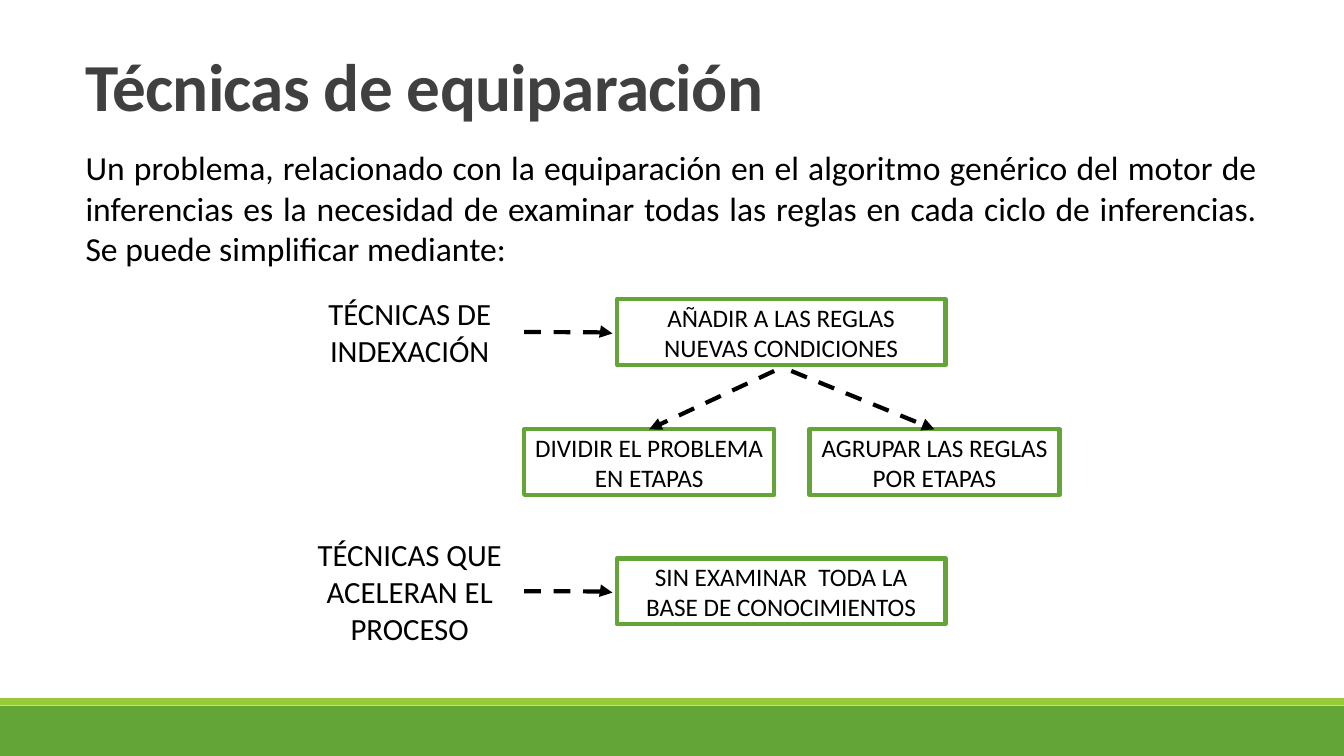
from dataclasses import dataclass

from lxml.etree import SubElement
from pptx import Presentation
from pptx.dml.color import RGBColor
from pptx.enum.dml import MSO_LINE
from pptx.enum.shapes import MSO_CONNECTOR as CONN, MSO_SHAPE
from pptx.enum.text import MSO_ANCHOR as ANCHOR, PP_ALIGN as ALIGN
from pptx.oxml.ns import qn
from pptx.shapes.autoshape import Shape
from pptx.shapes.connector import Connector
from pptx.slide import Slide
from pptx.util import Pt


@dataclass(frozen=True)
class Theme:
    font: str = "Calibri"
    title_color: str = "404040"
    ink: str = "000000"
    paper: str = "FFFFFF"
    green: str = "63A537"
    lime: str = "99CB38"
    title: int = 48
    body: int = 24
    label: int = 22
    box: int = 18
    stroke: int = 3


@dataclass(frozen=True)
class Box:
    text: str
    left: float
    top: float
    width: float
    height: float


@dataclass(frozen=True)
class Technique:
    label: str
    method: str
    top: float


THEME = Theme()
SLIDE_W, SLIDE_H = 960, 540
MARGIN, TEXT_W = 54, 851
BOX_H = 46.8
LABEL_X, LABEL_W, LABEL_H = 203, 174.3, 34.6
METHOD_X, METHOD_W = 440.6, 234.8
STEP_X, STEP_TOP, STEP_W, STEP_PITCH = 374.4, 306.7, 178.6, 203.8
ARROW_W, ARROW_DROP = 63.1, 1
FORK_X, FORK_TOP, FORK_GAP = 559.1, 265, 12.2

TECHNIQUES = [
    Technique("TÉCNICAS DE INDEXACIÓN", "AÑADIR A LAS REGLAS NUEVAS CONDICIONES", 213.8),
    Technique("TÉCNICAS QUE ACELERAN EL PROCESO",
              "SIN EXAMINAR  TODA LA BASE DE CONOCIMIENTOS", 398.9),
]
STEPS = ["DIVIDIR EL PROBLEMA EN ETAPAS", "AGRUPAR LAS REGLAS POR ETAPAS"]


def rgb(color: str) -> RGBColor:
    return RGBColor.from_string(color)


def write(sp: Shape, text: str, size: int, align: ALIGN, anchor: ANCHOR,
          color: str = THEME.ink) -> None:
    tf = sp.text_frame
    tf.word_wrap = True
    tf.vertical_anchor = anchor
    p = tf.paragraphs[0]
    p.text = text
    p.alignment = align
    font = p.runs[0].font
    font.name, font.size = THEME.font, Pt(size)
    font.color.rgb = rgb(color)


def add_text(slide: Slide, box: Box, size: int, align: ALIGN = ALIGN.JUSTIFY,
             anchor: ANCHOR = ANCHOR.TOP, color: str = THEME.ink) -> Shape:
    sp = slide.shapes.add_textbox(Pt(box.left), Pt(box.top), Pt(box.width), Pt(box.height))
    write(sp, box.text, size, align, anchor, color)
    return sp


def add_rect(slide: Slide, box: Box, fill: str) -> Shape:
    sp = slide.shapes.add_shape(MSO_SHAPE.RECTANGLE, Pt(box.left), Pt(box.top),
                                Pt(box.width), Pt(box.height))
    sp.shadow.inherit = False
    sp.fill.solid()
    sp.fill.fore_color.rgb = rgb(fill)
    sp.line.fill.background()
    return sp


def add_outlined_box(slide: Slide, box: Box) -> Shape:
    sp = add_rect(slide, box, THEME.paper)
    sp.line.color.rgb = rgb(THEME.green)
    sp.line.width = Pt(THEME.stroke)
    write(sp, box.text, THEME.box, ALIGN.CENTER, ANCHOR.MIDDLE)
    return sp


def add_dashed_arrow(slide: Slide, kind: CONN, x1: float, y1: float,
                     x2: float, y2: float) -> Connector:
    arrow = slide.shapes.add_connector(kind, Pt(x1), Pt(y1), Pt(x2), Pt(y2))
    arrow.line.color.rgb = rgb(THEME.ink)
    arrow.line.width = Pt(THEME.stroke)
    arrow.line.dash_style = MSO_LINE.DASH
    sp_pr = arrow._element.spPr
    SubElement(sp_pr.find(qn("a:ln")), qn("a:tailEnd"), type="triangle")
    SubElement(sp_pr, qn("a:effectLst"))
    return arrow


def add_technique(slide: Slide, item: Technique) -> None:
    """Draw a label, its method box and the curved arrow between them."""
    middle = item.top + BOX_H / 2
    label = Box(item.label, LABEL_X, middle - LABEL_H / 2, LABEL_W, LABEL_H)
    sp = add_text(slide, label, THEME.label, ALIGN.CENTER, ANCHOR.MIDDLE)
    p = sp.text_frame.paragraphs[0]
    p.space_before = Pt(3)
    p._p.get_or_add_pPr().set("marL", str(Pt(5)))
    add_outlined_box(slide, Box(item.method, METHOD_X, item.top, METHOD_W, BOX_H))
    arrow = add_dashed_arrow(slide, CONN.CURVE, STEP_X, middle,
                             STEP_X + ARROW_W, middle + ARROW_DROP)
    bends = arrow._element.spPr.find(qn("a:prstGeom")).find(qn("a:avLst"))
    SubElement(bends, qn("a:gd"), name="adj1", fmla="val 103200")


def add_steps(slide: Slide) -> None:
    """Draw the two step boxes and the arrows that fork down to them."""
    for i, text in enumerate(STEPS):
        left = STEP_X + i * STEP_PITCH
        sp = add_outlined_box(slide, Box(text, left, STEP_TOP, STEP_W, BOX_H))
        start = FORK_X + (i - 0.5) * FORK_GAP
        arrow = add_dashed_arrow(slide, CONN.STRAIGHT, start, FORK_TOP,
                                 left + STEP_W / 2, STEP_TOP)
        arrow.end_connect(sp, 0)


def main() -> None:
    prs = Presentation()
    prs.slide_width, prs.slide_height = Pt(SLIDE_W), Pt(SLIDE_H)
    slide = prs.slides.add_slide(prs.slide_layouts[6])

    add_rect(slide, Box("", 0, 504, SLIDE_W, 36), THEME.green)
    add_rect(slide, Box("", 0, 498.7, SLIDE_W, 5), THEME.lime)

    title = add_text(slide, Box("Técnicas de equiparación", MARGIN, 36.7, TEXT_W, 103),
                     THEME.title, color=THEME.title_color)
    p = title.text_frame.paragraphs[0]
    p.line_spacing = 0.85
    r = p.runs[0]
    r.font.bold = True
    r.font._element.set("spc", "-50")

    add_text(slide, Box(
        "Un problema, relacionado con la equiparación en el algoritmo genérico del motor de "
        "inferencias es la necesidad de examinar todas las reglas en cada ciclo de "
        "inferencias. Se puede simplificar mediante:",
        MARGIN, 101.5, TEXT_W, 94.3), THEME.body)

    for item in TECHNIQUES:
        add_technique(slide, item)
    add_steps(slide)
    prs.save("out.pptx")


if __name__ == "__main__":
    main()
